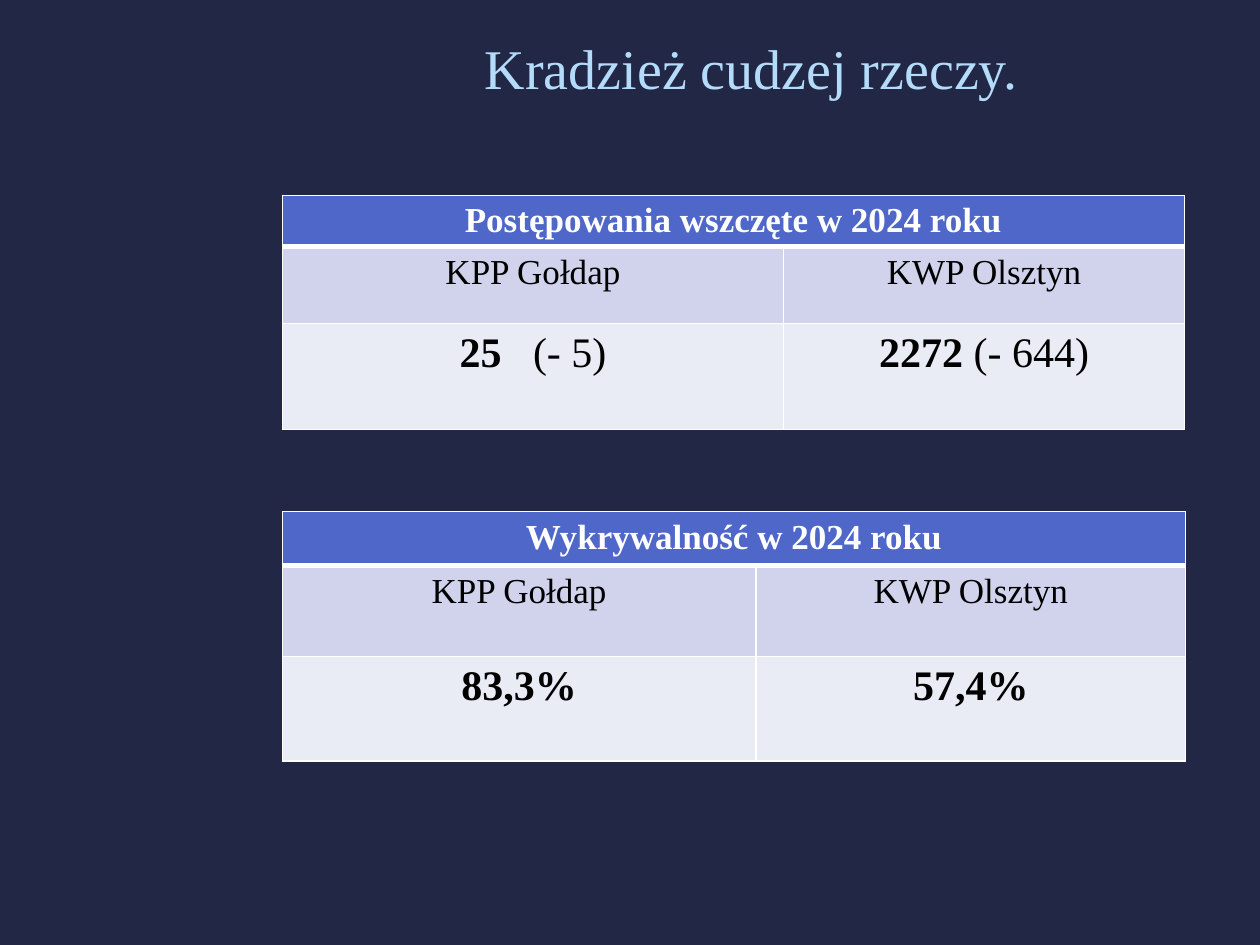
from lxml import etree
from pptx import Presentation
from pptx.dml.color import RGBColor
from pptx.enum.text import MSO_ANCHOR, PP_ALIGN
from pptx.oxml.ns import qn
from pptx.util import Inches, Pt

CENTER = PP_ALIGN.CENTER
MIDDLE = MSO_ANCHOR.MIDDLE
TITLE_ONLY = 5

COLORS = {
    "background": "212745",
    "title": "B4DCFA",
    "header": "4E67C8",
    "units": "D0D3EB",
    "figures": "E9EBF5",
    "light": "FFFFFF",
    "dark": "000000",
}
FONT = "Times New Roman"
# Band of each table row: fill, text colour, text size
BANDS = [("header", "light", 20), ("units", "dark", 20), ("figures", "dark", 24)]
UNITS = ["KPP Gołdap", "KWP Olsztyn"]
TABLE_LEFT = 2.24


def color(name):
    return RGBColor.from_string(COLORS[name])


class SlideBuilder:
    def __init__(self, presentation):
        self.slide = presentation.slides.add_slide(presentation.slide_layouts[TITLE_ONLY])
        background = self.slide.background.fill
        background.solid()
        background.fore_color.rgb = color("background")

    def style(self, paragraph, size, color_name):
        paragraph.alignment = CENTER
        font = paragraph.font
        font.name = FONT
        font.size = Pt(size)
        font.color.rgb = color(color_name)

    def title(self, text, left, top, width, height):
        title = self.slide.shapes.title
        title.left, title.top = Inches(left), Inches(top)
        title.width, title.height = Inches(width), Inches(height)
        title.text_frame.vertical_anchor = MIDDLE
        title.text_frame.text = text
        self.style(title.text_frame.paragraphs[0], 32, "title")

    def borders(self, cell, row):
        """Draw thin white edges, with a thick rule below the header row."""
        properties = cell._tc.get_or_add_tcPr()
        widths = {"L": 1, "R": 1, "T": 3 if row == 1 else 1, "B": 3 if row == 0 else 1}
        for side, width in widths.items():
            line = etree.SubElement(properties, qn(f"a:ln{side}"), w=str(Pt(width)))
            fill = etree.SubElement(line, qn("a:solidFill"))
            etree.SubElement(fill, qn("a:srgbClr"), val=COLORS["light"])

    def cell(self, cell, row, pieces):
        """Fill a cell with (text, bold, extra letter spacing in points) pieces."""
        fill_name, text_color, size = BANDS[row]
        self.borders(cell, row)
        cell.fill.solid()
        cell.fill.fore_color.rgb = color(fill_name)
        paragraph = cell.text_frame.paragraphs[0]
        self.style(paragraph, size, text_color)
        for text, bold, spacing in pieces:
            run = paragraph.add_run()
            run.text = text
            run.font.bold = bold
            if spacing:
                run._r.get_or_add_rPr().set("spc", str(spacing * 100))

    def table(self, heading, figures, top, column_widths, row_heights):
        table = self.slide.shapes.add_table(
            len(row_heights), len(column_widths), Inches(TABLE_LEFT), Inches(top),
            Inches(sum(column_widths)), Inches(sum(row_heights))).table
        for column, width in zip(table.columns, column_widths):
            column.width = Inches(width)
        for row, height in zip(table.rows, row_heights):
            row.height = Inches(height)

        rows = [
            [[(heading, True, 0)], []],
            [[(unit, False, 0)] for unit in UNITS],
            figures,
        ]
        for r, row in enumerate(rows):
            for c, pieces in enumerate(row):
                self.cell(table.cell(r, c), r, pieces)
        table.cell(0, 0).merge(table.cell(0, 1))


def main():
    presentation = Presentation()
    presentation.slide_width, presentation.slide_height = Inches(10), Inches(7.5)

    builder = SlideBuilder(presentation)
    builder.table(
        "Postępowania wszczęte w 2024 roku",
        [[("25", True, 0), (" ", True, 12), ("(- 5)", False, 0)],
         [("2272", True, 0), (" (- 644)", False, 0)]],
        1.55, [3.98, 3.18], [0.4, 0.61, 0.84])
    builder.table(
        "Wykrywalność w 2024 roku",
        [[("83,3%", True, 0)], [("57,4%", True, 0)]],
        4.06, [3.76, 3.41], [0.43, 0.72, 0.83])
    builder.title("Kradzież cudzej rzeczy.", 1.93, 0, 8.07, 1.07)

    presentation.save("out.pptx")


if __name__ == "__main__":
    main()
